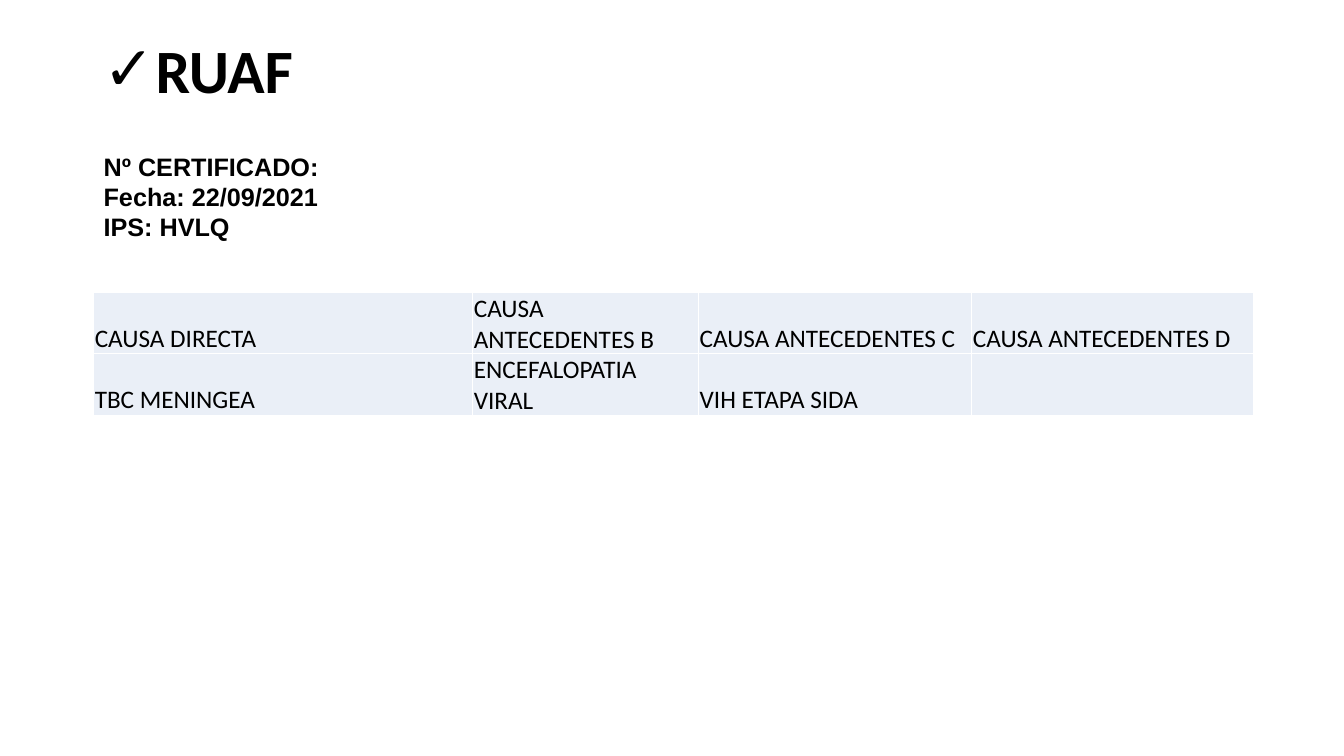
"""Build the RUAF death certificate slide."""
import pptx
import pptx.util
import pptx.dml.color
import pptx.enum.text
import pptx.oxml
import pptx.oxml.ns

PX = 9144
BLACK = pptx.dml.color.RGBColor(0, 0, 0)
WHITE = pptx.dml.color.RGBColor(255, 255, 255)
PALE = pptx.dml.color.RGBColor(0xEA, 0xEF, 0xF7)
ANCHOR = pptx.enum.text.MSO_ANCHOR
LEFT, WIDE = 93, 1150
COLS = (376, 224, 271, 279)
ROW = 61
FACTS = ("Nº CERTIFICADO:", "Fecha: 22/09/2021", "IPS: HVLQ")
CAUSES = (
    ("CAUSA DIRECTA", "CAUSA ANTECEDENTES B",
     "CAUSA ANTECEDENTES C", "CAUSA ANTECEDENTES D"),
    ("TBC MENINGEA", "ENCEFALOPATIA VIRAL", "VIH ETAPA SIDA", ""),
)


def scale(*sizes):
    """Turn px lengths into EMU."""
    return [size * PX for size in sizes]


def style(frame, face, size, bold=False):
    """Format every run of a text frame."""
    for para in frame.paragraphs:
        for run in para.runs:
            run.font.name = face
            run.font.size = pptx.util.Pt(size)
            run.font.bold = bold
            run.font.color.rgb = BLACK


def add_xml(parent, tag, body):
    """Append a drawing element to its parent."""
    space = pptx.oxml.ns.nsdecls("a")
    parent.append(pptx.oxml.parse_xml(f"<a:{tag} {space} {body}</a:{tag}>"))


def add_title(slide, text):
    """Fill the title and give it a check mark bullet."""
    title = slide.shapes.title
    title.left, title.top, title.width, title.height = scale(LEFT, 0, WIDE, 145)
    frame = title.text_frame
    frame.text = text
    frame.word_wrap = True
    frame.auto_size = pptx.enum.text.MSO_AUTO_SIZE.NONE
    frame.vertical_anchor = ANCHOR.MIDDLE
    para = frame.paragraphs[0]
    para.alignment = pptx.enum.text.PP_ALIGN.LEFT
    para.line_spacing = 0.9
    props = para._p.get_or_add_pPr()
    props.set("marL", str(31 * PX))
    props.set("indent", str(-31 * PX))
    add_xml(props, "buFont", 'typeface="Arial">')
    add_xml(props, "buChar", 'char="✓">')
    style(frame, "Calibri", 44, True)


def add_facts(slide, lines):
    """Add the certificate details."""
    box = slide.shapes.add_textbox(*scale(LEFT, 145, 950, 101))
    frame = box.text_frame
    frame.word_wrap = True
    frame.auto_size = pptx.enum.text.MSO_AUTO_SIZE.SHAPE_TO_FIT_TEXT
    frame.text = "\n".join(lines)
    style(frame, "Arial", 18, True)


def fill_cell(cell, text):
    """Write and format one table cell."""
    cell.text = text
    cell.vertical_anchor = ANCHOR.BOTTOM
    cell.margin_left, cell.margin_top, cell.margin_right = scale(1, 1, 1)
    cell.margin_bottom = 0
    props = cell._tc.get_or_add_tcPr()
    for side in ("lnL", "lnR", "lnT", "lnB"):
        add_xml(props, side, f'w="12700"><a:solidFill><a:srgbClr val="{WHITE}"/></a:solidFill>')
    cell.fill.solid()
    cell.fill.fore_color.rgb = PALE
    style(cell.text_frame, "Calibri", 18)


def add_causes(slide, rows):
    """Add the table of causes of death."""
    place = scale(LEFT, 290, WIDE, ROW * len(rows))
    table = slide.shapes.add_table(len(rows), len(COLS), *place).table
    table.first_row = False
    table.horz_banding = False
    for col, width in zip(table.columns, scale(*COLS)):
        col.width = width
    for line, texts in zip(table.rows, rows):
        line.height = ROW * PX
        for cell, text in zip(line.cells, texts):
            fill_cell(cell, text)


def main():
    """Build and save the slide."""
    deck = pptx.Presentation()
    deck.slide_width, deck.slide_height = scale(1333, 750)
    slide = deck.slides.add_slide(deck.slide_layouts[5])
    add_title(slide, "RUAF")
    add_facts(slide, FACTS)
    add_causes(slide, CAUSES)
    deck.save("out.pptx")


if __name__ == "__main__":
    main()
